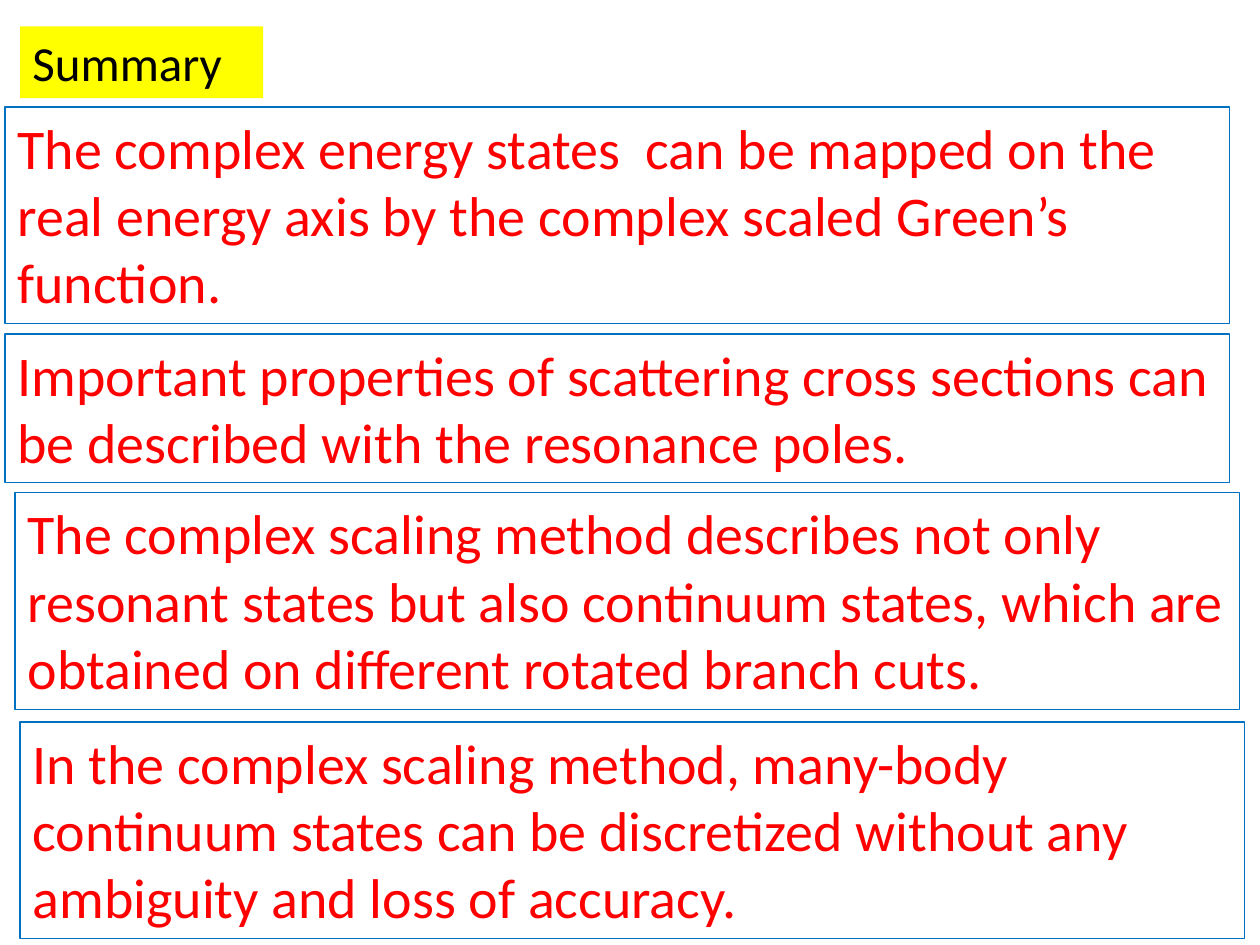
import pptx
import pptx.dml.color
import pptx.enum.text
import pptx.util
from pptx.util import Inches


def color(value):
    return pptx.dml.color.RGBColor.from_string(value)


class SlideBuilder:
    font = "Calibri"
    heading_size = 28
    heading_color = "000000"
    heading_fill = "FFFF00"
    body_size = 32
    body_color = "FF0000"
    border_color = "0070C0"
    border_width = 0.75

    def __init__(self, page):
        self.page = page

    def text_box(self, text, left, top, width, height, size, text_color):
        box = self.page.shapes.add_textbox(
            Inches(left), Inches(top), Inches(width), Inches(height))
        frame = box.text_frame
        frame.word_wrap = True
        frame.auto_size = pptx.enum.text.MSO_AUTO_SIZE.SHAPE_TO_FIT_TEXT
        para = frame.paragraphs[0]
        para.text = text
        para.font.name = self.font
        para.font.size = pptx.util.Pt(size)
        para.font.color.rgb = color(text_color)
        return box

    def heading(self, text, left, top, width, height):
        box = self.text_box(text, left, top, width, height,
                            self.heading_size, self.heading_color)
        box.fill.solid()
        box.fill.fore_color.rgb = color(self.heading_fill)

    def statement(self, text, left, top, width, height):
        box = self.text_box(text, left, top, width, height,
                            self.body_size, self.body_color)
        box.line.color.rgb = color(self.border_color)
        box.line.width = pptx.util.Pt(self.border_width)


STATEMENT_WIDTH = 9.72
TWO_LINES, THREE_LINES = 1.18, 1.72
STATEMENTS = [
    (0.04, 0.85, THREE_LINES,
     "The complex energy states  can be mapped on the real energy axis "
     "by the complex scaled Green’s function."),
    (0.04, 2.65, TWO_LINES,
     "Important properties of scattering cross sections can be described "
     "with the resonance poles."),
    (0.12, 3.91, THREE_LINES,
     "The complex scaling method describes not only resonant states but also "
     "continuum states, which are obtained on different rotated branch cuts."),
    (0.16, 5.73, THREE_LINES,
     "In the complex scaling method, many-body continuum states can be "
     "discretized without any ambiguity and loss of accuracy."),
]


def main():
    deck = pptx.Presentation()
    deck.slide_width = Inches(10)
    deck.slide_height = Inches(7.5)
    builder = SlideBuilder(deck.slides.add_slide(deck.slide_layouts[6]))
    for left, top, height, text in STATEMENTS:
        builder.statement(text, left, top, STATEMENT_WIDTH, height)
    builder.heading("Summary", 0.16, 0.21, 1.93, 0.57)
    deck.save("out.pptx")


if __name__ == "__main__":
    main()
